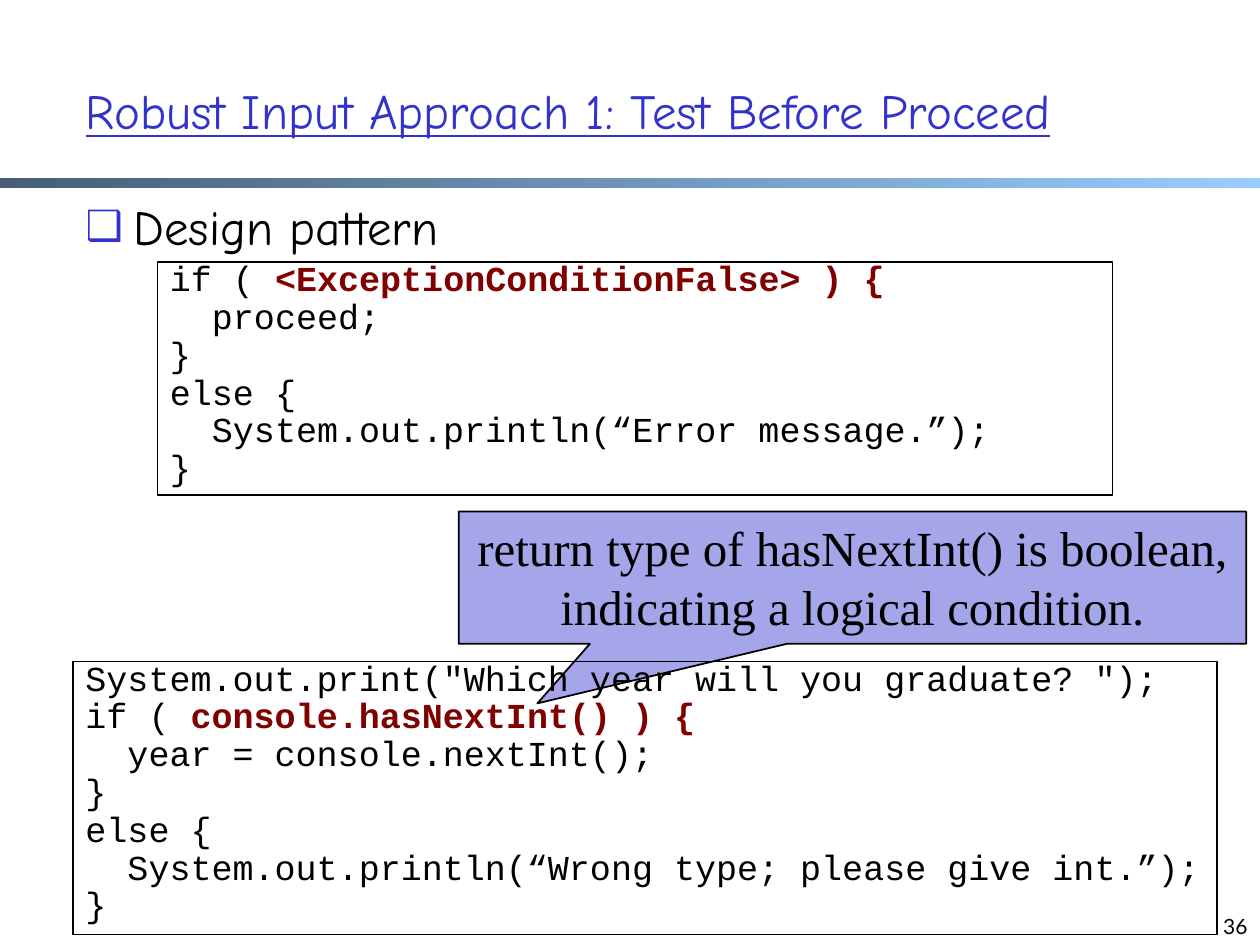
import dataclasses

import lxml.etree
import pptx
import pptx.dml.color
import pptx.enum.shapes
import pptx.enum.text
import pptx.oxml.ns
import pptx.util

WIDTH, HEIGHT = 10, 7.5
COLUMN, ROW = WIDTH / 120, HEIGHT / 90

SHAPES = pptx.enum.shapes.MSO_SHAPE
ALIGN = pptx.enum.text.PP_ALIGN
ANCHOR = pptx.enum.text.MSO_ANCHOR
AUTO_SIZE = pptx.enum.text.MSO_AUTO_SIZE


@dataclasses.dataclass(frozen=True)
class Theme:
    accent: str = "3333CC"
    ink: str = "000000"
    highlight: str = "800000"
    callout: str = "A5A5E9"
    bar_start: str = "475E76"
    bar_end: str = "99CCFF"
    heading_font: str = "Comic Neue"
    code_font: str = "Courier New"
    callout_font: str = "Times New Roman"
    number_font: str = "Lato"
    large: int = 28
    code: int = 20
    small: int = 12


THEME = Theme()

PATTERN_CODE = [
    ("if ( ", "<ExceptionConditionFalse> ) {"),
    ("  proceed;",),
    ("}",),
    ("else {",),
    ("  System.out.println(“Error message.”);",),
    ("}",),
]
EXAMPLE_CODE = [
    ('System.out.print("Which year will you graduate? ");',),
    ("if ( ", "console.hasNextInt() ) {"),
    ("  year = console.nextInt();",),
    ("}",),
    ("else {",),
    ("  System.out.println(“Wrong type; please give int.”);",),
    ("}",),
]


def rgb(color):
    return pptx.dml.color.RGBColor.from_string(color)


def grid(left, top, columns, rows):
    """Turn grid units into left, top, width and height."""
    return [pptx.util.Inches(round(value, 2)) for value in
            (left * COLUMN, top * ROW, columns * COLUMN, rows * ROW)]


def set_attributes(target, values):
    for name, value in values.items():
        setattr(target, name, value)


def add_run(paragraph, text, font, size, color=THEME.ink, **style):
    run = paragraph.add_run()
    run.text = text
    set_attributes(run.font, {"name": font, "size": pptx.util.Pt(size), **style})
    run.font.color.rgb = rgb(color)


def set_hanging_indent(paragraph, inches):
    properties = paragraph._p.get_or_add_pPr()
    distance = pptx.util.Inches(inches)
    properties.set("marL", str(distance))
    properties.set("indent", str(-distance))
    return properties


def add_bullet(properties, character, color, percent):
    qualified = pptx.oxml.ns.qn
    bullet_color = lxml.etree.SubElement(properties, qualified("a:buClr"))
    lxml.etree.SubElement(bullet_color, qualified("a:srgbClr"), val=color)
    lxml.etree.SubElement(properties, qualified("a:buSzPct"), val=str(percent * 1000))
    lxml.etree.SubElement(properties, qualified("a:buChar"), char=character)


def place_placeholder(placeholder, box, anchor):
    set_attributes(placeholder, dict(zip(("left", "top", "width", "height"), box)))
    set_attributes(placeholder.text_frame, {
        "vertical_anchor": anchor, "word_wrap": True, "auto_size": AUTO_SIZE.NONE})
    return placeholder.text_frame.paragraphs[0]


def fill_title(slide, text):
    paragraph = place_placeholder(slide.shapes.title, grid(7, 3, 107, 15), ANCHOR.MIDDLE)
    paragraph.alignment = ALIGN.LEFT
    add_run(paragraph, text, THEME.heading_font, THEME.large, THEME.accent, underline=True)


def fill_body(slide, text):
    paragraph = place_placeholder(slide.placeholders[1], grid(7, 18.1, 102, 61), ANCHOR.TOP)
    paragraph.space_before = pptx.util.Pt(THEME.large * 0.24)
    add_bullet(set_hanging_indent(paragraph, 0.38), "❑", THEME.accent, 85)
    add_run(paragraph, text, THEME.heading_font, THEME.large)


def add_box(slide, kind, box, line_width=None):
    shape = slide.shapes.add_shape(kind, *box)
    shape.shadow.inherit = False
    if line_width:
        shape.line.color.rgb = rgb(THEME.ink)
        shape.line.width = pptx.util.Pt(line_width)
    else:
        shape.line.fill.background()
    set_attributes(shape.text_frame, {"word_wrap": True, "vertical_anchor": ANCHOR.TOP})
    return shape


def add_gradient_bar(slide):
    bar = add_box(slide, SHAPES.RECTANGLE, grid(0, 16.95, 120, 1))
    bar.fill.gradient()
    bar.fill.gradient_angle = 0
    colors = (THEME.bar_start, THEME.bar_end)
    for position, (stop, color) in enumerate(zip(bar.fill.gradient_stops, colors)):
        stop.position = position
        stop.color.rgb = rgb(color)


def add_callout(slide, text):
    callout = add_box(slide, SHAPES.RECTANGULAR_CALLOUT, grid(43.7, 48.7, 75, 12.6), 1)
    callout.adjustments[0], callout.adjustments[1] = -0.4, 0.95
    callout.fill.solid()
    callout.fill.fore_color.rgb = rgb(THEME.callout)
    paragraph = callout.text_frame.paragraphs[0]
    paragraph.alignment = ALIGN.CENTER
    add_run(paragraph, text, THEME.callout_font, THEME.large)


def add_code(slide, box, lines):
    """Draw a code box; the second part of a line is highlighted."""
    shape = add_box(slide, SHAPES.RECTANGLE, box, 0.75)
    shape.fill.background()
    frame = shape.text_frame
    frame.auto_size = AUTO_SIZE.SHAPE_TO_FIT_TEXT
    for index, parts in enumerate(lines):
        paragraph = frame.add_paragraph() if index else frame.paragraphs[0]
        set_attributes(paragraph, {
            "alignment": ALIGN.LEFT, "line_spacing": 0.7,
            "space_before": pptx.util.Pt(THEME.code * 0.24)})
        set_hanging_indent(paragraph, 0.31)
        for part, color, bold in zip(parts, (THEME.ink, THEME.highlight), (False, True)):
            add_run(paragraph, part, THEME.code_font, THEME.code, color, bold=bold)


def add_slide_number(slide, number):
    frame = slide.shapes.add_textbox(*grid(92, 84, 28, 6)).text_frame
    set_attributes(frame, {"word_wrap": True, "vertical_anchor": ANCHOR.BOTTOM})
    paragraph = frame.paragraphs[0]
    paragraph.alignment = ALIGN.RIGHT
    add_run(paragraph, number, THEME.number_font, THEME.small)


def main():
    presentation = pptx.Presentation()
    presentation.slide_width = pptx.util.Inches(WIDTH)
    presentation.slide_height = pptx.util.Inches(HEIGHT)
    slide = presentation.slides.add_slide(presentation.slide_layouts[1])
    add_gradient_bar(slide)
    fill_title(slide, "Robust Input Approach 1: Test Before Proceed")
    fill_body(slide, "Design pattern")
    add_slide_number(slide, "36")
    add_callout(slide, "return type of hasNextInt() is boolean, indicating a logical condition.")
    add_code(slide, grid(15, 25, 91, 22.2), PATTERN_CODE)
    add_code(slide, grid(7, 63, 109, 26), EXAMPLE_CODE)
    presentation.save("out.pptx")


if __name__ == "__main__":
    main()
